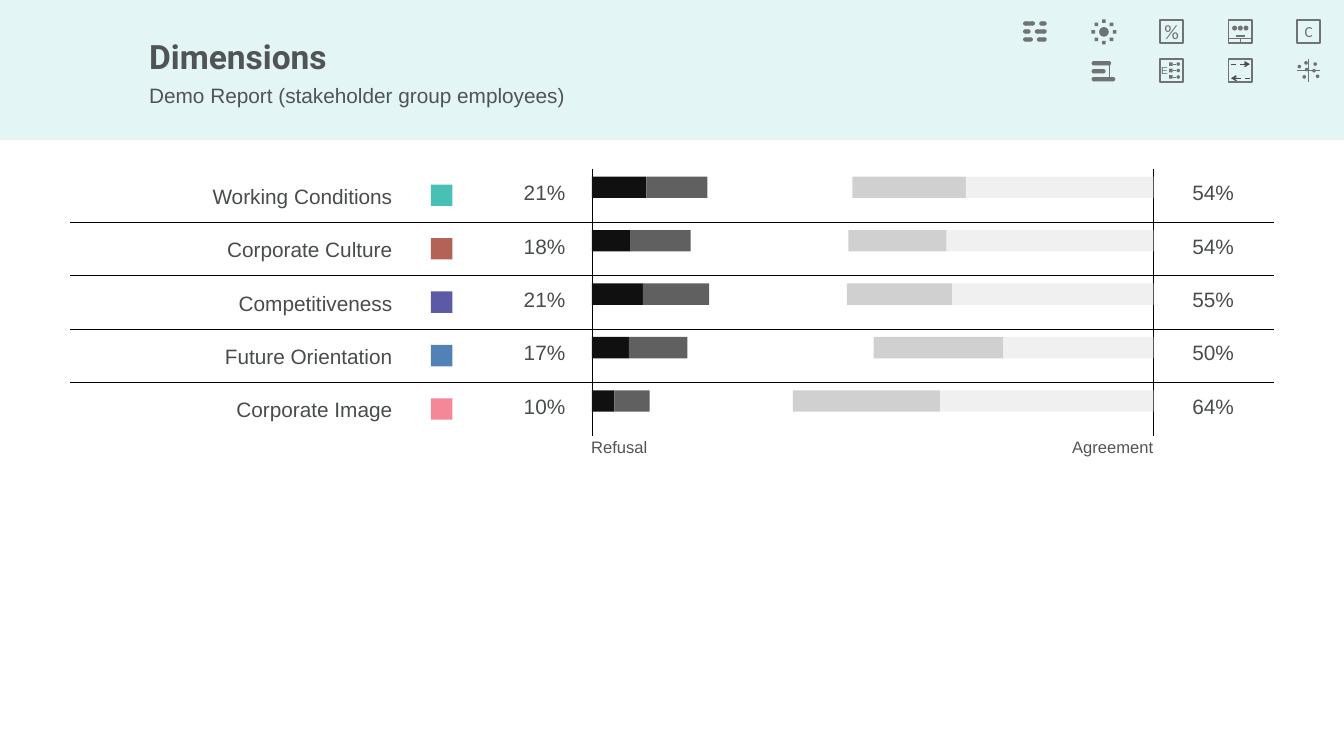
import math
from dataclasses import dataclass

import pptx
import pptx.dml.color
import pptx.enum.dml
import pptx.enum.shapes
import pptx.enum.text
import pptx.oxml.ns
import pptx.util
from lxml import etree

Pt = pptx.util.Pt
Align = pptx.enum.text.PP_ALIGN
Anchor = pptx.enum.text.MSO_ANCHOR
RECTANGLE = pptx.enum.shapes.MSO_SHAPE.RECTANGLE
OVAL = pptx.enum.shapes.MSO_SHAPE.OVAL
qn = pptx.oxml.ns.qn


@dataclass(frozen=True)
class Theme:
    accent: str = "49C0B6"
    heading: str = "515455"
    body: str = "494C4D"
    icon: str = "707274"
    rule: str = "000000"
    answers: tuple = ("101010", "606060", "D0D0D0", "F0F0F0")
    title_font: str = "Roboto"
    body_font: str = "Arial"
    icon_font: str = "Calibri"
    title_size: float = 39.5
    body_size: float = 24.5
    axis_size: float = 19.5
    thick: float = 2.36
    thin: float = 0.85


THEME = Theme()
WIDTH, HEIGHT = 1583.28, 890.64
ICON = 27.4
DOT = 4.2
PILL = 5
TABLE_LEFT, TABLE_RIGHT, TABLE_TOP, ROW = 82.8, 1501.2, 198.7, 62.94
AXIS_LEFT, AXIS_RIGHT = 697.2, 1358.7
BAR = 25.2

# Name, swatch, then percentages: two of refusal, two of agreement
DIMENSIONS = [
    ("Working Conditions", "49C0B6", (9.7, 10.9), (20.2, 33.4)),
    ("Corporate Culture", "B26256", (6.9, 10.7), (17.5, 36.8)),
    ("Competitiveness", "5C5AA7", (9.1, 11.8), (18.8, 35.8)),
    ("Future Orientation", "5181B7", (6.6, 10.4), (23.1, 26.7)),
    ("Corporate Image", "F48798", (4.0, 6.3), (26.3, 37.9)),
]


def rgb(colour):
    return pptx.dml.color.RGBColor.from_string(colour)


class Painter:
    """Draws on the slide, or inside an icon's group relative to its corner."""

    def __init__(self, slide, theme):
        self.slide, self.theme = slide, theme
        self.shapes, self.x, self.y = slide.shapes, 0, 0

    def icon(self, column, row):
        """Return a painter for one cell of the icon grid."""
        painter = Painter(self.slide, self.theme)
        painter.shapes = self.slide.shapes.add_group_shape().shapes
        painter.x, painter.y = 1205.3 + 80.64 * column, 23 + 46.8 * row
        return painter

    def shape(self, kind, left, top, width, height, colour=None):
        shape = self.shapes.add_shape(
            kind, Pt(self.x + left), Pt(self.y + top), Pt(width), Pt(height))
        shape.shadow.inherit = False
        shape.fill.solid()
        shape.fill.fore_color.rgb = rgb(colour or self.theme.icon)
        shape.line.fill.background()
        return shape

    def frame(self):
        """Draw the square outline of an icon."""
        shape = self.shape(RECTANGLE, 0, 0, ICON, ICON)
        shape.fill.background()
        shape.line.color.rgb = rgb(self.theme.icon)
        shape.line.width = Pt(self.theme.thick)
        return shape

    def pill(self, left, top, width):
        self.shape(RECTANGLE, left + PILL / 2, top, width - PILL, PILL)
        for end in (left, left + width - PILL):
            self.shape(OVAL, end, top, PILL, PILL)

    def line(self, x1, y1, x2, y2, weight=None, colour=None):
        line = self.shapes.add_connector(
            pptx.enum.shapes.MSO_CONNECTOR.STRAIGHT,
            Pt(self.x + x1), Pt(self.y + y1), Pt(self.x + x2), Pt(self.y + y2))
        line.line.color.rgb = rgb(colour or self.theme.icon)
        line.line.width = Pt(weight or self.theme.thin)
        etree.SubElement(line.element.spPr, qn("a:effectLst"))
        return line

    def arrow(self, x1, y1, x2, y2):
        arrow = self.line(x1, y1, x2, y2, 1.5, self.theme.body)
        arrow.line.dash_style = pptx.enum.dml.MSO_LINE.DASH
        outline = arrow.element.spPr.find(qn("a:ln"))
        etree.SubElement(outline, qn("a:tailEnd"), type="arrow")

    def fill_paragraph(self, paragraph, text, size, colour, font,
                       align=Align.LEFT, before=0):
        paragraph.text = text
        paragraph.alignment = align
        paragraph.space_before = Pt(before)
        paragraph.font.size = Pt(size)
        paragraph.font.name = font
        paragraph.font.color.rgb = rgb(colour)

    def set_frame(self, frame, top, anchor):
        frame.margin_left = frame.margin_right = frame.margin_bottom = 0
        frame.margin_top = Pt(top)
        frame.word_wrap = True
        frame.auto_size = pptx.enum.text.MSO_AUTO_SIZE.NONE
        frame.vertical_anchor = anchor

    def text(self, text, left, top, width, height, size, colour, font=None,
             align=Align.LEFT, anchor=Anchor.TOP, inset=0, before=0):
        frame = self.shapes.add_textbox(
            Pt(self.x + left), Pt(self.y + top), Pt(width), Pt(height)).text_frame
        self.set_frame(frame, inset, anchor)
        self.fill_paragraph(frame.paragraphs[0], text, size, colour,
                            font or self.theme.body_font, align, before)

    def letter(self, text, size, width=ICON, font=None):
        """Centre a character in an icon."""
        self.text(text, 0, 0, width, ICON, size, self.theme.icon, font,
                  Align.CENTER, Anchor.MIDDLE)

    def header(self, title, subtitle):
        band = self.shape(RECTANGLE, 0, 0, WIDTH, 165, self.theme.accent)
        colour = band.element.spPr.find(".//" + qn("a:srgbClr"))
        etree.SubElement(colour, qn("a:alpha"), val="15000")
        holder = self.slide.shapes.title
        holder.element.addprevious(band.element)
        holder.left, holder.top = Pt(175.7), Pt(30.2)
        holder.width, holder.height = Pt(1023.8), Pt(97.2)
        frame = holder.text_frame
        self.set_frame(frame, 12.2, Anchor.TOP)
        first, second = frame.paragraphs[0], frame.add_paragraph()
        self.fill_paragraph(first, title, self.theme.title_size, self.theme.heading,
                            self.theme.title_font, before=12.2)
        self.fill_paragraph(second, subtitle, self.theme.body_size, self.theme.heading,
                            self.theme.body_font, before=7.2)
        first.font.bold, second.font.bold = True, False


def draw_icons(painter):
    dashes = painter.icon(0, 0)
    for row, (left, right) in enumerate([(14, 8.8), (8.8, 14), (11.5, 11.5)]):
        dashes.pill(0, 2.2 + 9.4 * row, left)
        dashes.pill(27.8 - right, 2.2 + 9.4 * row, right)

    sun = painter.icon(1, 0)
    sun.shape(OVAL, 8.9, 8.9, 11.4, 11.4)
    for ray in range(8):
        angle = ray * math.pi / 4
        sun.shape(RECTANGLE, 12.5 + 12.6 * math.cos(angle),
                  12.5 + 12.6 * math.sin(angle), DOT, DOT)

    percent = painter.icon(2, 0)
    percent.frame()
    percent.letter("%", 24, font=THEME.icon_font)

    panel = painter.icon(3, 0)
    box = panel.frame()
    panel.line(0, 22.3, ICON, 22.3)
    panel.line(ICON / 2, 22.3, ICON / 2, ICON).end_connect(box, 2)
    for dot in range(3):
        panel.shape(OVAL, 4.3 + 6.7 * dot, 7.2, 5.8, 5.8)
    panel.line(8.5, 18.9, 19.3, 18.9, THEME.thick)

    initial = painter.icon(4, 0)
    initial.frame()
    initial.letter("C", 18, font=THEME.icon_font)

    bars = painter.icon(1, 1)
    for row, width in enumerate([23, 16.6, 28]):
        bars.pill(0, 2.2 + 9.4 * row, width)
    bars.line(20.9, 4.5, 20.9, 23)

    items = painter.icon(2, 1)
    items.frame()
    items.letter("E", 12, width=10.8)
    for row in range(3):
        top = 3.6 + 7.6 * row
        square = items.shape(RECTANGLE, 10.8, top, DOT, DOT)
        middle = top + DOT / 2
        items.line(15, middle, 19, middle).begin_connect(square, 3)
        items.shape(OVAL, 19.4, top, DOT, DOT)

    exchange = painter.icon(3, 1)
    exchange.frame()
    exchange.arrow(2.9, 5.8, 25.2, 5.8)
    exchange.arrow(25.2, 22.3, 2.9, 22.3)

    scatter = painter.icon(4, 1)
    for x, y in [(0.7, 6.5), (9.4, 10.1), (19.4, 3.6), (22.3, 18),
                 (6.5, 18.7), (8.6, 2.2), (18, 11.5)]:
        scatter.shape(OVAL, x, y, DOT, DOT)
    scatter.line(0, ICON / 2, ICON, ICON / 2)
    scatter.line(ICON / 2, 0, ICON / 2, ICON)


def draw_dimensions(painter):
    bottom = TABLE_TOP + ROW * len(DIMENSIONS)
    for x in (AXIS_LEFT, AXIS_RIGHT):
        painter.line(x, TABLE_TOP, x, bottom, 0.41, THEME.rule)
    for row, (name, swatch, refusal, agreement) in enumerate(DIMENSIONS):
        top = TABLE_TOP + ROW * row
        if row:
            painter.line(TABLE_LEFT, top, TABLE_RIGHT, top, 0.25, THEME.rule)
        painter.text(name, TABLE_LEFT, top, 379.4, ROW, THEME.body_size, THEME.body,
                     align=Align.RIGHT, anchor=Anchor.MIDDLE, inset=1.2, before=1.2)
        painter.shape(RECTANGLE, 507.6, top + 18.8, BAR, BAR, swatch)
        for left, shares in ((617, refusal), (1404.7, agreement)):
            painter.text(f"{sum(shares):.0f}%", left, top + 9.4, 60.5, BAR,
                         THEME.body_size, THEME.body, inset=3.8, before=3.8)
        scale = (AXIS_RIGHT - AXIS_LEFT) / 100
        neutral = 100 - sum(refusal) - sum(agreement)
        left = AXIS_LEFT
        for share, colour in zip((*refusal, neutral, *agreement),
                                 (*THEME.answers[:2], None, *THEME.answers[2:])):
            if colour:
                painter.shape(RECTANGLE, left, top + 9.4, share * scale, BAR, colour)
            left += share * scale
    for label, left, align in (("Refusal", AXIS_LEFT - 0.8, Align.LEFT),
                               ("Agreement", AXIS_RIGHT - 303, Align.RIGHT)):
        painter.text(label, left, bottom, 303, 26, THEME.axis_size, THEME.heading,
                     align=align, inset=1.2, before=1.2)


def main():
    presentation = pptx.Presentation()
    presentation.slide_width, presentation.slide_height = Pt(WIDTH), Pt(HEIGHT)
    slide = presentation.slides.add_slide(presentation.slide_layouts[5])
    painter = Painter(slide, THEME)
    painter.header("Dimensions", "Demo Report (stakeholder group employees)")
    draw_icons(painter)
    draw_dimensions(painter)
    presentation.save("out.pptx")


if __name__ == "__main__":
    main()
